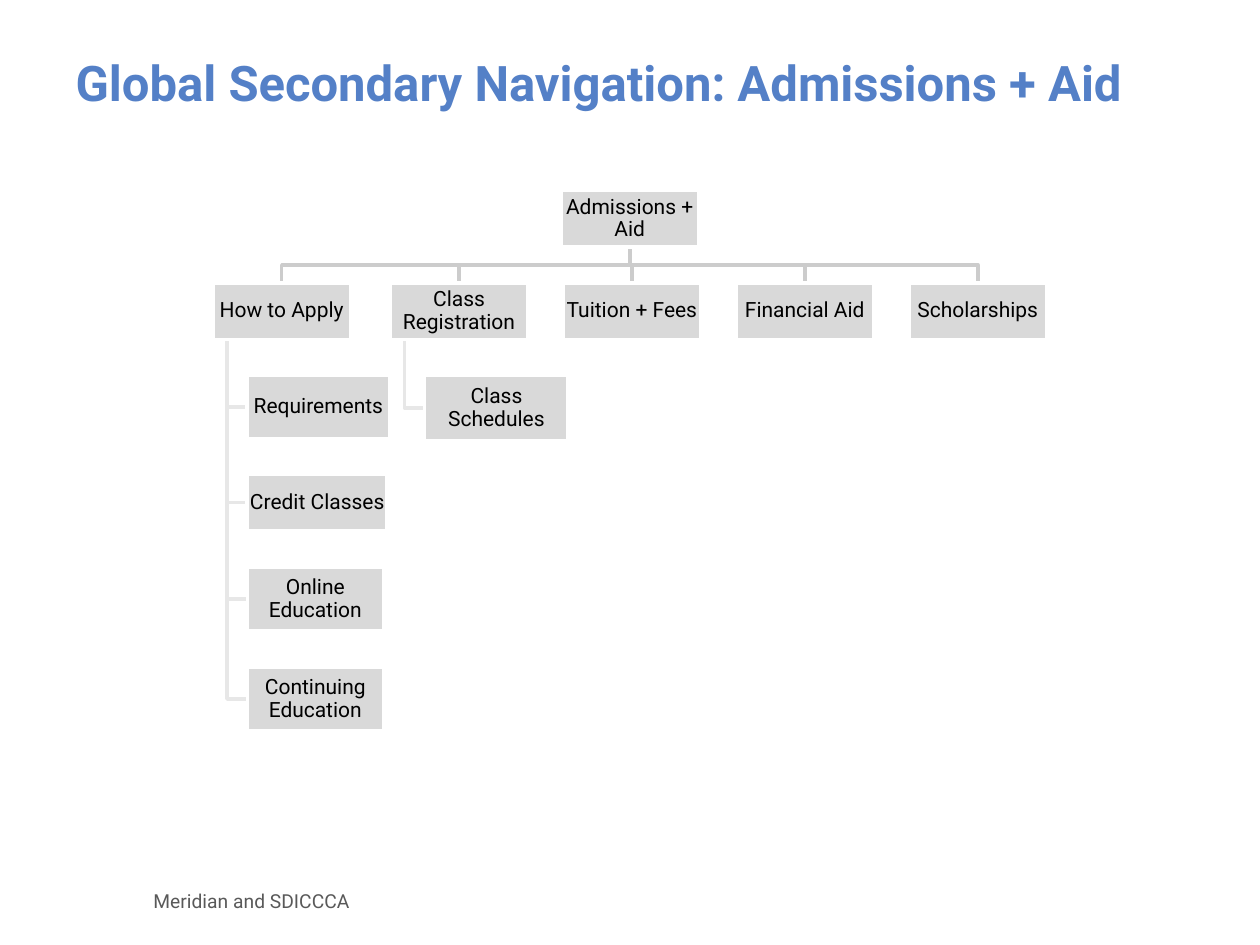
from pptx import Presentation
from pptx.dml.color import RGBColor
from pptx.enum.shapes import MSO_SHAPE
from pptx.enum.text import MSO_ANCHOR, MSO_AUTO_SIZE, PP_ALIGN
from pptx.util import Pt

NODE_WIDTH, NODE_HEIGHT = 78.5, 32.4
LEVEL_GAP = 20.5
CHILD_INDENT, TRUNK_INDENT = 19.6, 8
BRANCHES = [
    ("How to Apply", 0, [
        ("Requirements", 81.4, 36),
        ("Credit Classes", 80, 32.4),
        ("Online Education", 77.8, 36.7),
        ("Continuing Education", 77.8, 36.7),
    ]),
    ("Class Registration", 101.4, [("Class Schedules", 82, 37.4)]),
    ("Tuition + Fees", 200.2, []),
    ("Financial Aid", 299, []),
    ("Scholarships", 397.8, []),
]


def color(hex_value):
    """Turn a hex string into a colour."""
    return RGBColor.from_string(hex_value)


def format_text(frame, text, size, hex_value, bold=False, **settings):
    """Fill a text frame with one formatted paragraph."""
    frame.text = text
    frame_format = {"word_wrap": True, "auto_size": MSO_AUTO_SIZE.NONE,
                    "vertical_anchor": MSO_ANCHOR.MIDDLE}
    paragraph = frame.paragraphs[0]
    paragraph_format = {"alignment": PP_ALIGN.LEFT, **settings}
    font_format = {"name": "Roboto", "size": Pt(size), "bold": bold}
    for target, values in ((frame, frame_format), (paragraph, paragraph_format),
                           (paragraph.font, font_format)):
        for name, value in values.items():
            setattr(target, name, value)
    paragraph.font.color.rgb = color(hex_value)


def draw_link(slide, points, hex_value):
    """Draw an open angled line through the points."""
    start, *rest = [(Pt(x), Pt(y)) for x, y in points]
    builder = slide.shapes.build_freeform(*start)
    builder.add_line_segments(rest, close=False)
    link = builder.convert_to_shape()
    link.shadow.inherit = False
    link.fill.background()
    link.line.color.rgb = color(hex_value)
    link.line.width = Pt(2)


def draw_node(slide, label, left, top, width, height):
    """Draw one labelled page of the site tree."""
    node = slide.shapes.add_shape(
        MSO_SHAPE.RECTANGLE, Pt(left), Pt(top), Pt(width), Pt(height))
    node.shadow.inherit = False
    node.fill.solid()
    node.fill.fore_color.rgb = color("D9D9D9")
    node.line.color.rgb = color("FFFFFF")
    node.line.width = Pt(2)
    for side in ("left", "top", "right", "bottom"):
        setattr(node.text_frame, f"margin_{side}", Pt(0.7))
    format_text(node.text_frame, label, 12, "000000",
                alignment=PP_ALIGN.CENTER, line_spacing=0.9)


def draw_site_tree(slide, left, top, width):
    """Lay out the root, its branches and their child pages."""
    center = left + width / 2
    root_bottom = top + NODE_HEIGHT
    branch_top = root_bottom + LEVEL_GAP
    branch_bottom = branch_top + NODE_HEIGHT
    bend = root_bottom + LEVEL_GAP / 2
    nodes = [("Admissions + Aid", center - NODE_WIDTH / 2, top, NODE_WIDTH, NODE_HEIGHT)]
    for label, offset, children in BRANCHES:
        branch_left = left + offset
        middle = branch_left + NODE_WIDTH / 2
        nodes.append((label, branch_left, branch_top, NODE_WIDTH, NODE_HEIGHT))
        draw_link(slide, [(center, root_bottom), (center, bend),
                          (middle, bend), (middle, branch_top)], "CCCCCC")
        trunk = branch_left + TRUNK_INDENT
        child_left = branch_left + CHILD_INDENT
        child_top = branch_bottom + LEVEL_GAP
        for child, child_width, child_height in children:
            child_middle = child_top + child_height / 2
            draw_link(slide, [(trunk, branch_bottom), (trunk, child_middle),
                              (child_left, child_middle)], "E7E7E7")
            nodes.append((child, child_left, child_top, child_width, child_height))
            child_top += child_height + LEVEL_GAP
    for node in nodes:
        draw_node(slide, *node)


def place_title(slide, left, top, width, height):
    """Move and format the title placeholder."""
    title = slide.shapes.title
    box = {"left": left, "top": top, "width": width, "height": height}
    for name, value in box.items():
        setattr(title, name, Pt(value))
    format_text(title.text_frame, "Global Secondary Navigation: Admissions + Aid",
                28, "5480C7", bold=True)


def place_credit(slide, left, top, width, height):
    """Write the credit at the foot of the slide."""
    credit = slide.shapes.add_textbox(Pt(left), Pt(top), Pt(width), Pt(height))
    format_text(credit.text_frame, "Meridian and SDICCCA", 11, "595959")


def main():
    """Build and save the slide."""
    deck = Presentation()
    deck.slide_width, deck.slide_height = Pt(720), Pt(540)
    slide = deck.slides.add_slide(deck.slide_layouts[5])
    place_title(slide, 36, 21.6, 648, 51)
    draw_site_tree(slide, 121.7, 108.7, 476.3)
    place_credit(slide, 80.6, 500.4, 352.8, 28.8)
    deck.save("out.pptx")


if __name__ == "__main__":
    main()
